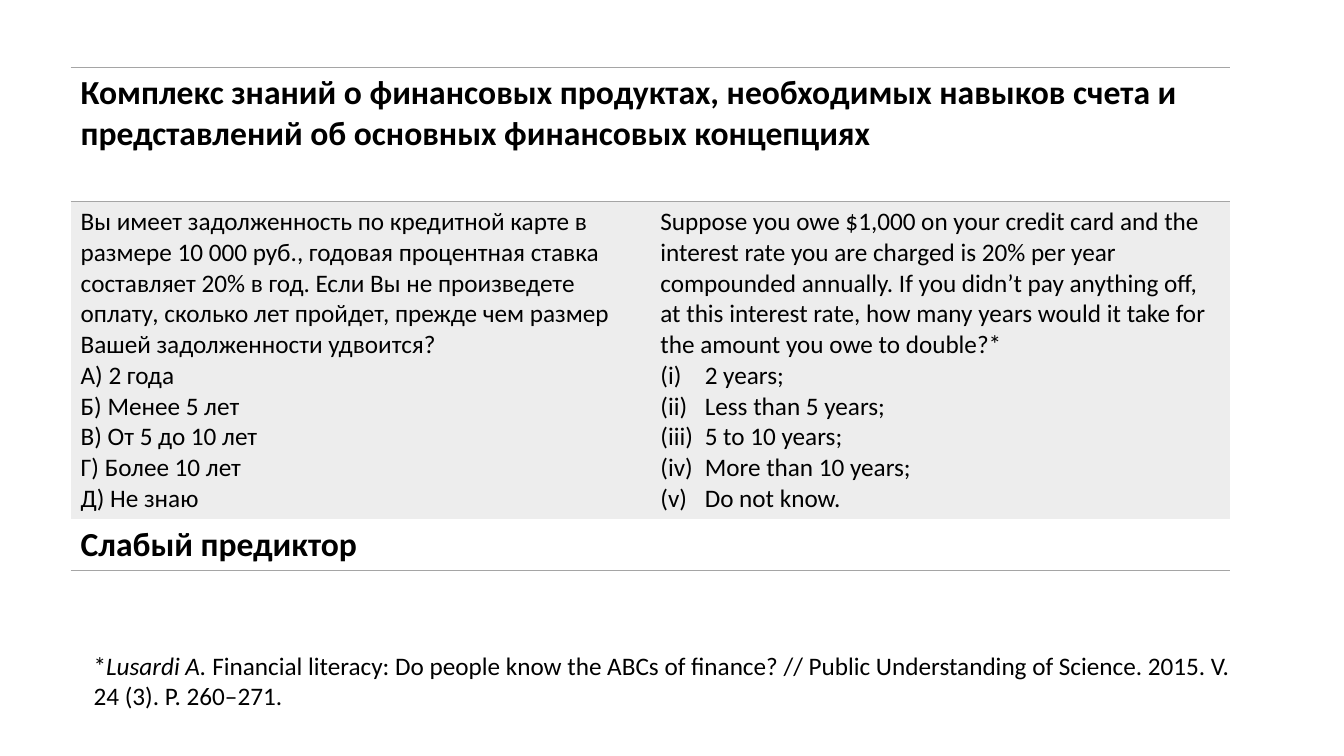
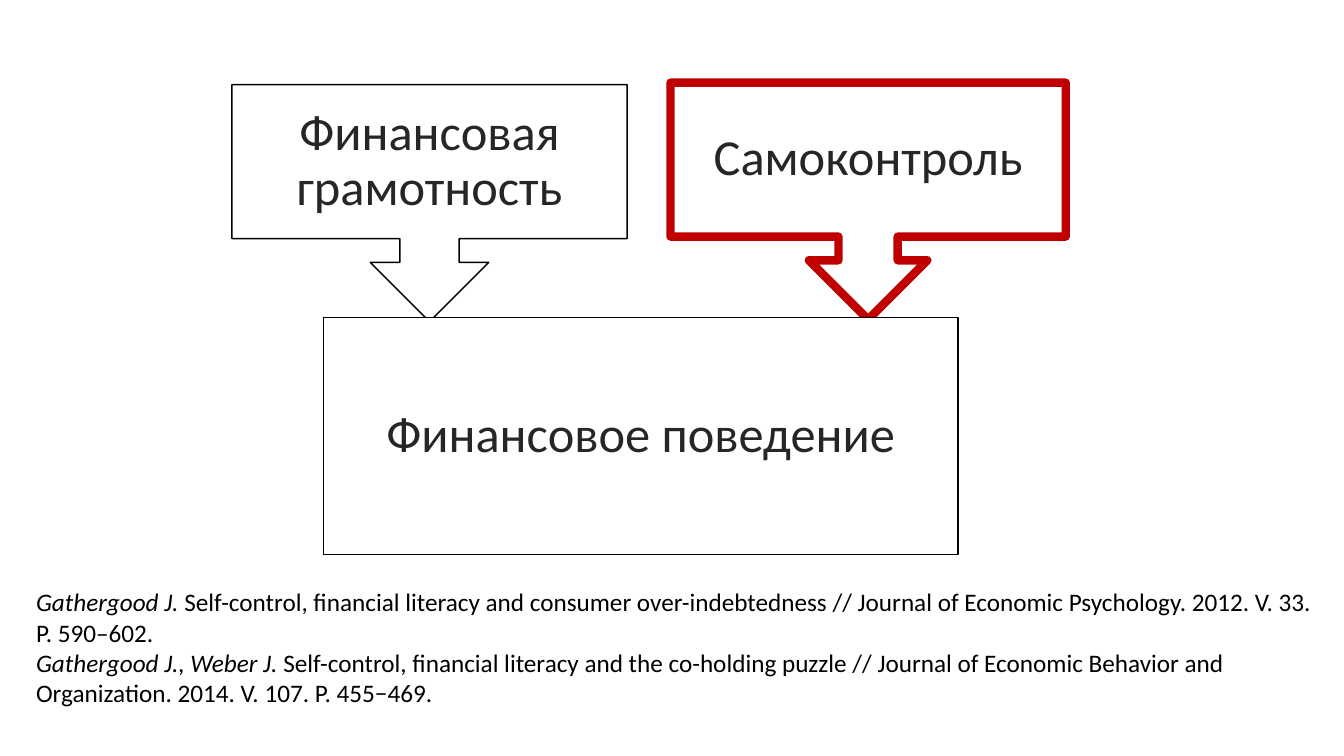
from pptx import Presentation
from pptx.dml.color import RGBColor
from pptx.enum.shapes import MSO_SHAPE as Shape
from pptx.enum.text import MSO_ANCHOR as Anchor, PP_ALIGN as Align
from pptx.oxml import parse_xml
from pptx.oxml.ns import nsdecls, qn
from pptx.util import Inches, Pt

# Shared style
FONT = "Calibri"
BLACK = RGBColor(0x00, 0x00, 0x00)
DARK = RGBColor(0x26, 0x26, 0x26)
WHITE = RGBColor(0xFF, 0xFF, 0xFF)
RED = RGBColor(0xC0, 0x00, 0x00)
GREY = RGBColor(0xA5, 0xA5, 0xA5)
LIGHT_GREY = RGBColor(0xED, 0xED, 0xED)
BODY, HEADING, DIAGRAM = Pt(18), Pt(24), Pt(36)
NO_TABLE_STYLE = "{2D5ABB26-0587-4C30-8999-92F81FD0307C}"


def write(text_frame, paragraphs, size=BODY, color=BLACK, bold=False):
    """Write paragraphs, each a list of (text, italic) runs."""
    text_frame.word_wrap = True
    for index, runs in enumerate(paragraphs):
        paragraph = text_frame.add_paragraph() if index else text_frame.paragraphs[0]
        for text, italic in runs:
            run = paragraph.add_run()
            run.text = text
            run.font.name = FONT
            run.font.size = size
            run.font.bold = bold
            run.font.italic = italic
            run.font.color.rgb = color


def add_border(cell, side):
    """Draw a thin grey line on one side (lnT or lnB) of a table cell."""
    cell._tc.get_or_add_tcPr().insert(0, parse_xml(
        f'<a:{side} {nsdecls("a")} w="12700"><a:solidFill>'
        f'<a:srgbClr val="{GREY}"/></a:solidFill></a:{side}>'))


presentation = Presentation()
presentation.slide_width = Inches(13.33)
presentation.slide_height = Inches(7.5)
blank = presentation.slide_layouts[6]

# Slide 1: financial literacy question
slide = presentation.slides.add_slide(blank)
table_frame = slide.shapes.add_table(3, 2, Inches(0.7), Inches(0.67), Inches(11.5), Inches(4.98))
table = table_frame.table
table.first_row = False
table.horz_banding = False
table._tbl.tblPr.find(qn("a:tableStyleId")).text = NO_TABLE_STYLE
for row, height in zip(table.rows, (1.33, 3.15, 0.5)):
    row.height = Inches(height)

# Heading and conclusion rows
table.cell(0, 0).merge(table.cell(0, 1))
write(table.cell(0, 0).text_frame, [[(
    "Комплекс знаний о финансовых продуктах, необходимых навыков счета и "
    "представлений об основных финансовых концепциях", False)]], HEADING, bold=True)
write(table.cell(2, 0).text_frame, [[("Слабый предиктор", False)]], HEADING, bold=True)

# Question in both languages
russian = [
    "Вы имеет задолженность по кредитной карте в размере 10 000 руб., годовая "
    "процентная ставка составляет 20% в год. Если Вы не произведете оплату, "
    "сколько лет пройдет, прежде чем размер Вашей задолженности удвоится?",
    "А) 2 года", "Б) Менее 5 лет", "В) От 5 до 10 лет", "Г) Более 10 лет", "Д) Не знаю",
]
english = [
    "Suppose you owe $1,000 on your credit card and the interest rate you are "
    "charged is 20% per year compounded annually. If you didn’t pay anything off, "
    "at this interest rate, how many years would it take for the amount you owe "
    "to double?*",
    "2 years;", "Less than 5 years;", "5 to 10 years;", "More than 10 years;", "Do not know.",
]
for column, question in enumerate((russian, english)):
    write(table.cell(1, column).text_frame, [[(line, False)] for line in question])

# Roman numbering of the English answers
for paragraph in table.cell(1, 1).text_frame.paragraphs[1:]:
    properties = paragraph._p.get_or_add_pPr()
    properties.set("marL", str(Inches(0.44)))
    properties.set("indent", str(-Inches(0.44)))
    properties.append(parse_xml(f'<a:buFont {nsdecls("a")} typeface="+mj-lt"/>'))
    properties.append(parse_xml(f'<a:buAutoNum {nsdecls("a")} type="romanLcParenBoth"/>'))

# Fills and rules
for column in range(2):
    heading, question, conclusion = (table.cell(row, column) for row in range(3))
    heading.fill.background()
    question.fill.solid()
    question.fill.fore_color.rgb = LIGHT_GREY
    conclusion.fill.background()
    add_border(heading, "lnB")
    add_border(heading, "lnT")
    add_border(conclusion, "lnB")

# Source
source = slide.shapes.add_textbox(Inches(0.83), Inches(6.4), Inches(11.72), Inches(0.71))
write(source.text_frame, [[
    ("*", False),
    ("Lusardi A.", True),
    (" Financial literacy: Do people know the ABCs of finance? // Public "
     "Understanding of Science. 2015. V. 24 (3). P. 260–271.", False),
]])

# Slide 2: two factors lead to financial behaviour
slide = presentation.slides.add_slide(blank)
blocks = [
    ("Финансовая грамотность", Shape.DOWN_ARROW_CALLOUT, 2.3, 0.84, 3.92, BLACK, 1),
    ("Самоконтроль", Shape.DOWN_ARROW_CALLOUT, 6.65, 0.82, 3.92, RED, 6),
    ("Финансовое поведение", Shape.RECTANGLE, 3.21, 3.15, 6.29, BLACK, 1),
]
for label, kind, left, top, width, line_color, line_width in blocks:
    shape = slide.shapes.add_shape(kind, Inches(left), Inches(top), Inches(width), Inches(2.35))
    shape.shadow.inherit = False
    shape.fill.solid()
    shape.fill.fore_color.rgb = WHITE
    shape.line.color.rgb = line_color
    shape.line.width = Pt(line_width)
    frame = shape.text_frame
    frame.margin_left = frame.margin_right = Inches(0.15)
    frame.margin_top = frame.margin_bottom = Inches(0.15)
    frame.vertical_anchor = Anchor.MIDDLE
    write(frame, [[(label, False)]], DIAGRAM, DARK)
    frame.paragraphs[0].alignment = Align.CENTER
    frame.paragraphs[0].line_spacing = 0.9

# Sources
sources = slide.shapes.add_textbox(Inches(0.26), Inches(5.77), Inches(12.86), Inches(1.62))
write(sources.text_frame, [
    [("Gathergood J. ", True),
     ("Self-control, financial literacy and consumer over-indebtedness // Journal "
      "of Economic Psychology. 2012. V. 33. P. 590–602.", False)],
    [("Gathergood J., Weber J.", True),
     (" Self-control, financial literacy and the co-holding puzzle // Journal of "
      "Economic Behavior and Organization. 2014. V. 107. P. 455−469.", False)],
])

presentation.save("out.pptx")
